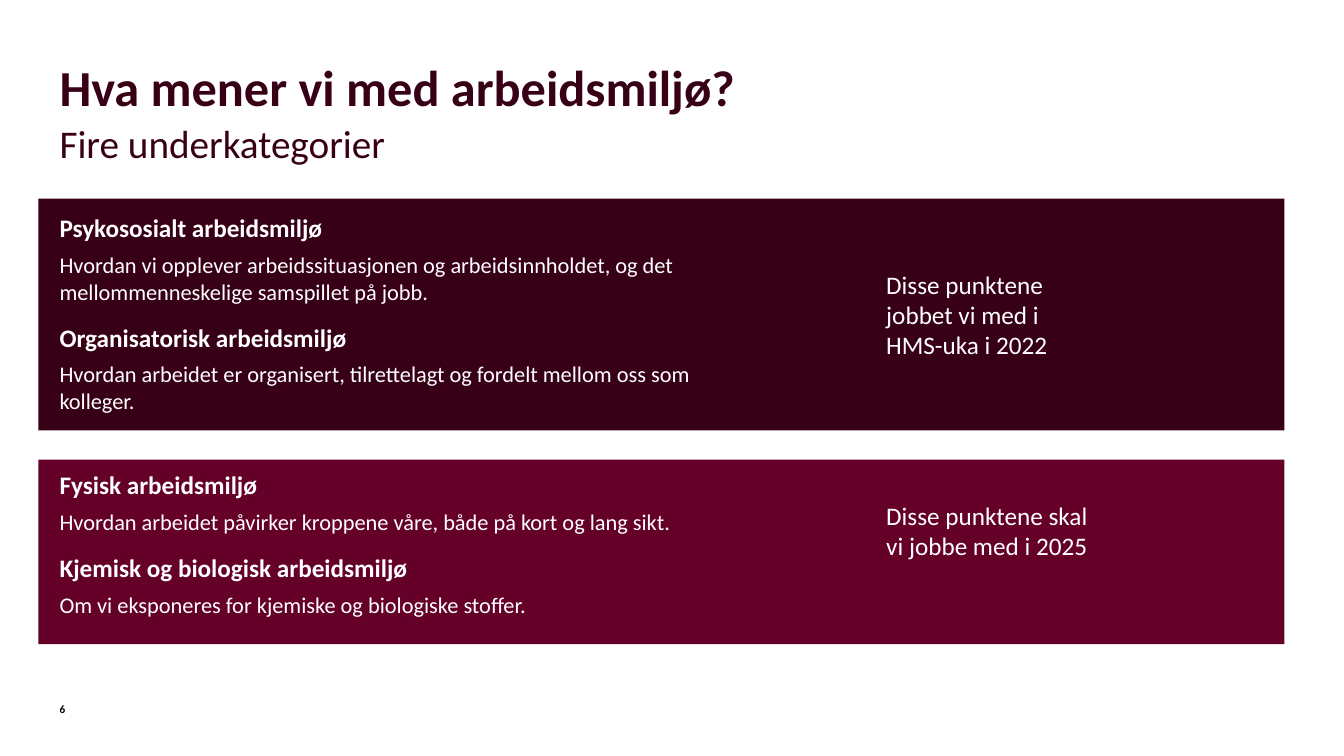
"""Build the slide on the four subcategories of the working environment."""
from pptx import Presentation, util as u
from pptx.dml.color import RGBColor
from pptx.enum import shapes, text

PLUM = RGBColor(0x38, 0x00, 0x16)
BURGUNDY = RGBColor(0x65, 0x00, 0x28)
WHITE = RGBColor(0xFF, 0xFF, 0xFF)
BLACK = RGBColor(0x00, 0x00, 0x00)
MARGIN = 0.59
NOTE_LEFT = 8.79

deck = Presentation()
deck.slide_width, deck.slide_height = u.Inches(13.33), u.Inches(7.5)
page = deck.slides.add_slide(deck.slide_layouts[6])


def add_text(*lines, at, color, anchor=text.MSO_ANCHOR.TOP, spacing=None):
    """Add a text box whose lines are (words, size, bold, space after)."""
    box = page.shapes.add_textbox(*map(u.Inches, at))
    frame = box.text_frame
    frame.word_wrap = True
    frame.vertical_anchor = anchor
    frame.margin_left = frame.margin_right = 0
    frame.margin_top = frame.margin_bottom = 0
    for index, (words, size, bold, after) in enumerate(lines):
        para = frame.add_paragraph() if index else frame.paragraphs[0]
        para.space_after = u.Pt(after)
        if spacing:
            para.line_spacing = spacing
        span = para.add_run()
        span.text = words
        span.font.name = "Calibri"
        span.font.size = u.Pt(size)
        span.font.bold = bold
        span.font.color.rgb = color


bands = [
    (1.97, 2.3, PLUM, 2.11, [
        ("Psykososialt arbeidsmiljø",
         "Hvordan vi opplever arbeidssituasjonen og arbeidsinnholdet, "
         "og det mellommenneskelige samspillet på jobb."),
        ("Organisatorisk arbeidsmiljø",
         "Hvordan arbeidet er organisert, tilrettelagt og fordelt "
         "mellom oss som kolleger."),
    ], 2.67, "Disse punktene jobbet vi med i HMS-uka i 2022"),
    (4.56, 1.83, BURGUNDY, 4.66, [
        ("Fysisk arbeidsmiljø",
         "Hvordan arbeidet påvirker kroppene våre, både på kort og lang sikt."),
        ("Kjemisk og biologisk arbeidsmiljø",
         "Om vi eksponeres for kjemiske og biologiske stoffer."),
    ], 4.96, "Disse punktene skal vi jobbe med i 2025"),
]

for top, height, fill, body_top, topics, note_top, note in bands:
    band = page.shapes.add_shape(
        shapes.MSO_SHAPE.RECTANGLE,
        u.Inches(0.38), u.Inches(top), u.Inches(12.36), u.Inches(height))
    band.shadow.inherit = False
    band.fill.solid()
    band.fill.fore_color.rgb = fill
    band.line.fill.background()

    lines = []
    for heading, description in topics:
        lines += [(heading, 18, True, 6), (description, 16, False, 12)]
    add_text(*lines, at=(MARGIN, body_top, 6.82, top + height - body_top), color=WHITE)
    add_text((note, 18, False, 6), at=(NOTE_LEFT, note_top, 2.03, 0.91), color=WHITE)

add_text(("Hva mener vi med arbeidsmiljø?", 36, True, 0),
         at=(MARGIN, 0.61, 12.15, 0.6), color=PLUM, spacing=0.94)
add_text(("Fire underkategorier", 28, False, 6),
         at=(MARGIN, 1.22, 12.15, 0.55), color=PLUM, spacing=0.94)
add_text(("6", 8, True, 0), at=(MARGIN, 6.9, 0.28, 0.2), color=BLACK,
         anchor=text.MSO_ANCHOR.BOTTOM)

deck.save("out.pptx")
